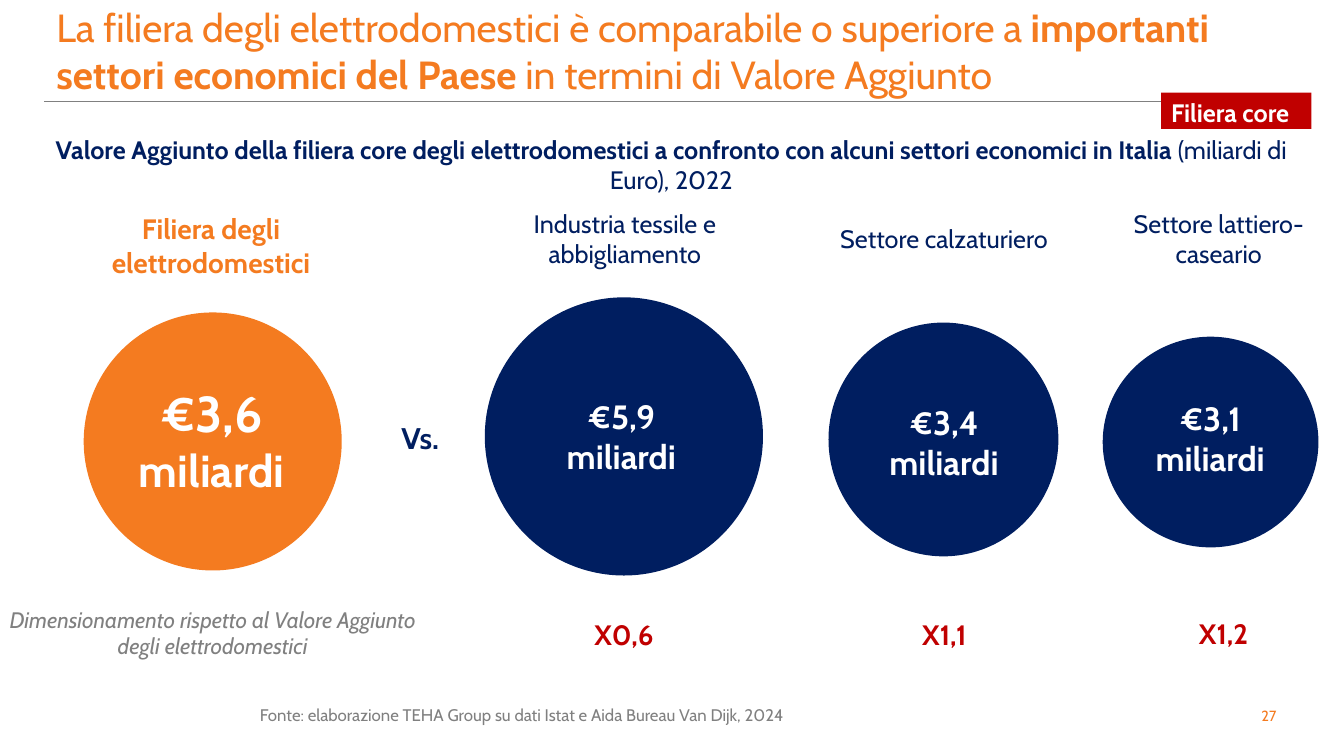
from dataclasses import dataclass

from pptx import Presentation
from pptx.dml.color import RGBColor
from pptx.enum.shapes import MSO_CONNECTOR, MSO_SHAPE
from pptx.enum.text import MSO_ANCHOR, PP_ALIGN
from pptx.oxml.xmlchemy import OxmlElement
from pptx.util import Pt

STRAIGHT = MSO_CONNECTOR.STRAIGHT
OVAL, RECTANGLE = MSO_SHAPE.OVAL, MSO_SHAPE.RECTANGLE
TOP, MIDDLE = MSO_ANCHOR.TOP, MSO_ANCHOR.MIDDLE
LEFT, CENTER = PP_ALIGN.LEFT, PP_ALIGN.CENTER


@dataclass(frozen=True)
class Theme:
    """Font, colours and type sizes of the slide."""

    font: str = "Cabin"
    orange: str = "F47B20"
    navy: str = "001E60"
    red: str = "C00000"
    grey: str = "808080"
    white: str = "FFFFFF"
    title: float = 28
    hero: float = 36
    hero_unit: float = 32
    value: float = 24
    versus: float = 21.3
    emphasis: float = 20
    body: float = 18
    note: float = 16
    source: float = 12
    number: float = 10.5


THEME = Theme()


@dataclass(frozen=True)
class Sector:
    """An industry compared with the appliance chain; frames are in points."""

    label: str
    label_frame: tuple
    circle_frame: tuple
    value: str
    value_frame: tuple
    factor: str
    factor_frame: tuple


SECTORS = (
    Sector("Industria tessile e abbigliamento", (365, 145.4, 162.7, 51),
           (346.3, 212.4, 198.7, 198.7), "€5,9\nmiliardi", (388, 275, 111.6, 72.7),
           "X0,6", (388.8, 437.8, 113.8, 31.7)),
    Sector("Settore calzaturiero", (554.4, 156.2, 239.8, 29),
           (591.8, 230.4, 164.2, 167), "€3,4 miliardi", (618.5, 279.4, 111.6, 72.7),
           "X1,1", (624.2, 437.8, 100.8, 31.7)),
    Sector("Settore lattiero-caseario", (782, 145.4, 177.1, 51),
           (787.7, 240.5, 154.1, 150.5), "€3,1\nmiliardi", (812.2, 278.6, 104.4, 69.1),
           "X1,2", (829.4, 437, 89.3, 31.7)),
)


def points(frame):
    """Turn a frame of numbers into lengths."""
    return [Pt(length) for length in frame]


def add_span(para, text, *, size, color, bold=False, italic=False):
    """Append formatted text to a paragraph, with a line break at each newline."""
    for index, line in enumerate(text.split("\n")):
        if index:
            para.add_line_break()
        span = para.add_run()
        span.text = line
        font = span.font
        font.name, font.size = THEME.font, Pt(size)
        font.bold, font.italic = bold, italic
        font.color.rgb = RGBColor.from_string(color)


def start_text(box, *, align=CENTER, anchor=TOP, margins=(7.2, 3.6)):
    """Set up the text frame of a box and return its first paragraph."""
    frame = box.text_frame
    frame.word_wrap = True
    frame.vertical_anchor = anchor
    frame.margin_left = frame.margin_right = Pt(margins[0])
    frame.margin_top = frame.margin_bottom = Pt(margins[1])
    para = frame.paragraphs[0]
    para.alignment = align
    return para


def add_text(page, frame, **layout):
    """Add a text box and return its first paragraph."""
    return start_text(page.shapes.add_textbox(*points(frame)), **layout)


def add_label(page, frame, text, *, size, color, bold=False, italic=False, **layout):
    """Add a text box whose text has a single format."""
    para = add_text(page, frame, **layout)
    add_span(para, text, size=size, color=color, bold=bold, italic=italic)


def add_filled(page, kind, frame, color):
    """Add a flat shape without an outline."""
    shape = page.shapes.add_shape(kind, *points(frame))
    shape.shadow.inherit = False
    shape.fill.solid()
    shape.fill.fore_color.rgb = RGBColor.from_string(color)
    shape.line.fill.background()
    return shape


def add_rule(page, start, end, color):
    """Add a thin straight line without a shadow."""
    rule = page.shapes.add_connector(STRAIGHT, *points(start + end))
    rule.line.color.rgb = RGBColor.from_string(color)
    rule.line.width = Pt(0.75)
    rule._element.spPr.append(OxmlElement("a:effectLst"))


def add_heading(page):
    """Add the title, the rule below it, the tag and the subtitle."""
    add_rule(page, (31.7, 72.5), (928, 72.5), THEME.grey)

    title = add_text(page, (33.1, 0, 893.5, 71.3), align=LEFT, anchor=MIDDLE)
    style = {"size": THEME.title, "color": THEME.orange}
    add_span(title, "La filiera degli elettrodomestici è comparabile o superiore a ", **style)
    add_span(title, "importanti settori economici del Paese ", bold=True, **style)
    add_span(title, "in termini di Valore Aggiunto", **style)

    tag = add_filled(page, RECTANGLE, (829.4, 66.2, 107.3, 25.9), THEME.red)
    add_span(start_text(tag, align=LEFT), "Filiera core",
             size=THEME.body, color=THEME.white, bold=True)

    subtitle = add_text(page, (29.5, 91.4, 900, 51.8), margins=(7.9, 4.3))
    style = {"size": THEME.body, "color": THEME.navy}
    add_span(subtitle, "Valore Aggiunto della filiera core degli elettrodomestici "
             "a confronto con alcuni settori economici in Italia", bold=True, **style)
    add_span(subtitle, " (miliardi di Euro), 2022", **style)


def add_appliances(page):
    """Add the appliance chain, the term of comparison on the left."""
    add_label(page, (28, 147.6, 245.5, 55.4), "Filiera degli elettrodomestici",
              size=THEME.emphasis, color=THEME.orange, bold=True)
    add_filled(page, OVAL, (59.8, 223.2, 184.3, 184.3), THEME.orange)
    value = add_text(page, (87.1, 258.5, 128.2, 110.2), anchor=MIDDLE)
    style = {"color": THEME.white, "bold": True}
    add_span(value, "€3,6 ", size=THEME.hero, **style)
    add_span(value, "miliardi", size=THEME.hero_unit, **style)
    add_label(page, (239, 296.6, 122.4, 33.1), "Vs.",
              size=THEME.versus, color=THEME.navy, bold=True)
    add_label(page, (0, 429.1, 304, 46), "Dimensionamento rispetto al Valore Aggiunto "
              "degli elettrodomestici", size=THEME.note, color=THEME.grey,
              italic=True, margins=(4, 3.6))


def add_sector(page, sector):
    """Add one compared sector: label, circle, value and factor."""
    add_label(page, sector.label_frame, sector.label, size=THEME.body, color=THEME.navy)
    add_filled(page, OVAL, sector.circle_frame, THEME.navy)
    add_label(page, sector.value_frame, sector.value, size=THEME.value,
              color=THEME.white, bold=True, anchor=MIDDLE, margins=(3.6, 3.6))
    add_label(page, sector.factor_frame, sector.factor,
              size=THEME.emphasis, color=THEME.red, bold=True)


def add_footer(page):
    """Add the source and the page number."""
    add_label(page, (177.8, 499, 622.8, 23),
              "Fonte: elaborazione TEHA Group su dati Istat e Aida Bureau Van Dijk, 2024",
              size=THEME.source, color=THEME.grey, align=LEFT, margins=(7.9, 4.3))
    add_label(page, (889.9, 501.1, 33.1, 20.9), "27", size=THEME.number, color=THEME.orange)


def main():
    """Build the slide and save it."""
    deck = Presentation()
    deck.slide_width, deck.slide_height = Pt(960), Pt(540)
    page = deck.slides.add_slide(deck.slide_layouts[6])
    add_heading(page)
    add_appliances(page)
    for sector in SECTORS:
        add_sector(page, sector)
    add_footer(page)
    deck.save("out.pptx")


if __name__ == "__main__":
    main()
